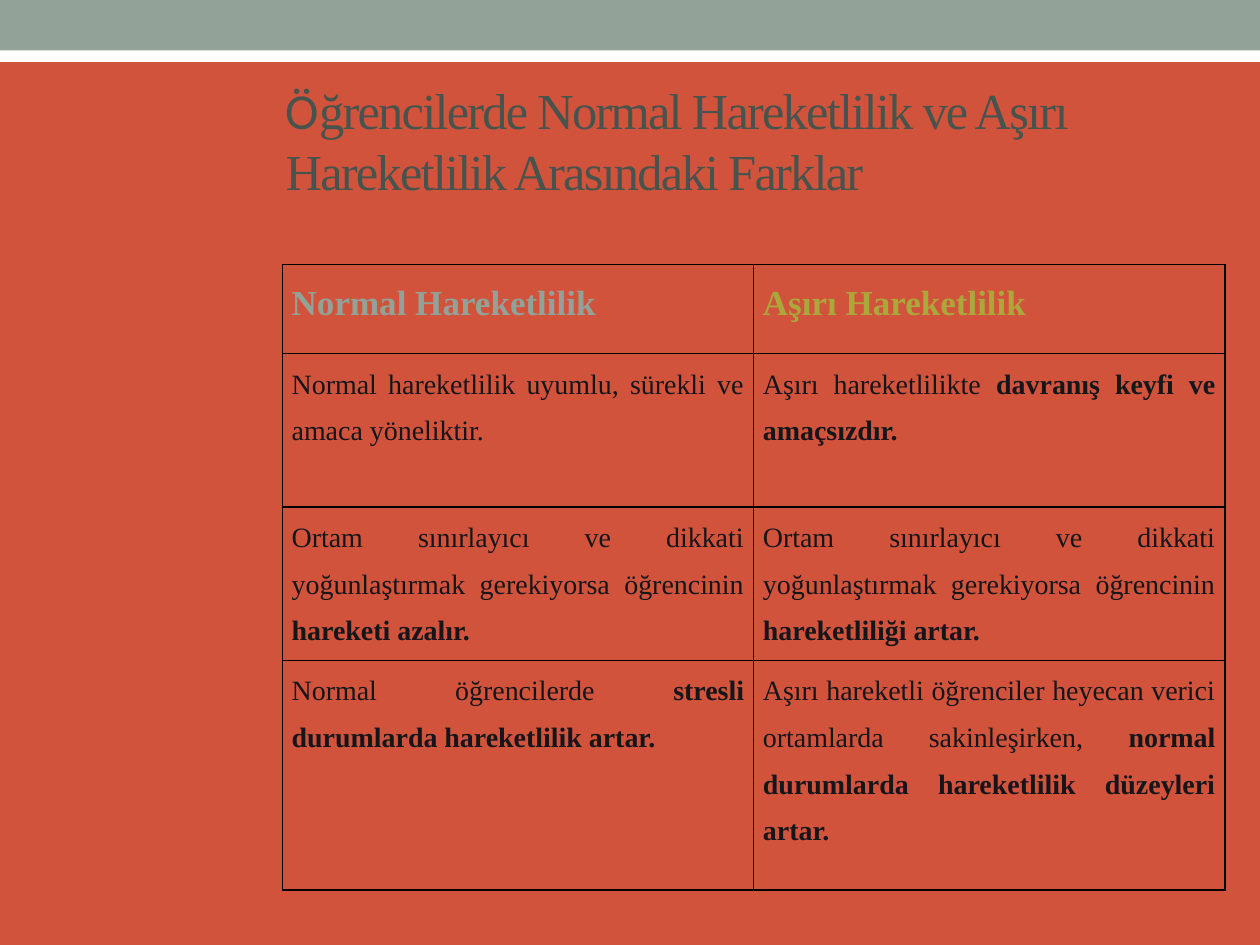
from lxml.etree import SubElement
from pptx import Presentation
from pptx.dml.color import RGBColor
from pptx.enum.shapes import MSO_SHAPE as Shape
from pptx.enum.text import MSO_ANCHOR as Anchor, PP_ALIGN as Align
from pptx.oxml.ns import qn
from pptx.util import Cm, Pt

COLORS = {
    "background": "D2533C", "white": "FFFFFF", "sage": "93A299",
    "title": "47534C", "olive": "ACA73B", "body": "15151A", "border": "000000",
}
SERIF = "Times New Roman"

# Content: each body cell is (plain text, bold text)
TITLE = [
    ("Ö", "Calibri"),
    ("ğrencilerde Normal Hareketlilik ve Aşırı Hareketlilik Arasındaki Farklar", SERIF),
]
HEADINGS = [("Normal Hareketlilik", "sage"), ("Aşırı Hareketlilik", "olive")]
LIMITS = "Ortam sınırlayıcı ve dikkati yoğunlaştırmak gerekiyorsa öğrencinin "
ROWS = [
    [("Normal hareketlilik uyumlu, sürekli ve amaca yöneliktir.", ""),
     ("Aşırı hareketlilikte ", "davranış keyfi ve amaçsızdır.")],
    [(LIMITS, "hareketi azalır."), (LIMITS, "hareketliliği artar.")],
    [("Normal öğrencilerde ", "stresli durumlarda hareketlilik artar."),
     ("Aşırı hareketli öğrenciler heyecan verici ortamlarda sakinleşirken, ",
      "normal durumlarda hareketlilik düzeyleri artar.")],
]

# Layout in centimetres
SLIDE_WIDTH, SLIDE_HEIGHT = 25.4, 19.05
BANDS = [(0.61, 0.64, "white"), (0, 1.02, "sage")]
TITLE_BOX = (5.51, 1.83, 19.25, 1.98)
TABLE_LEFT, TABLE_TOP, COLUMN_WIDTH = 5.69, 5.33, 9.5
ROW_HEIGHTS = [1.8, 3.09, 3.09, 4.63]


def rgb(name):
    return RGBColor.from_string(COLORS[name])


def add_text(para, text, size=16, font=SERIF, color="body", bold=False, spacing=0):
    span = para.add_run()
    span.text = text
    span.font.size = Pt(size)
    span.font.name = font
    span.font.bold = bold
    span.font.color.rgb = rgb(color)
    if spacing:
        span._r.get_or_add_rPr().set("spc", str(spacing * 100))


def add_borders(cell):
    properties = cell._tc.get_or_add_tcPr()
    for side in ("lnL", "lnR", "lnT", "lnB"):
        line = SubElement(properties, qn(f"a:{side}"), w=str(Pt(1)))
        fill = SubElement(line, qn("a:solidFill"))
        SubElement(fill, qn("a:srgbClr"), val=COLORS["border"])


def format_cell(cell):
    add_borders(cell)
    cell.fill.background()
    cell.margin_left = cell.margin_right = Cm(0.19)
    cell.margin_top = cell.margin_bottom = 0
    para = cell.text_frame.paragraphs[0]
    para.alignment = Align.JUSTIFY
    para.line_spacing = 1.5
    para.space_after = Pt(10)
    return para


deck = Presentation()
deck.slide_width, deck.slide_height = Cm(SLIDE_WIDTH), Cm(SLIDE_HEIGHT)
page = deck.slides.add_slide(deck.slide_layouts[6])
page.background.fill.solid()
page.background.fill.fore_color.rgb = rgb("background")

# Bands along the top
for top, height, color in BANDS:
    band = page.shapes.add_shape(Shape.RECTANGLE, 0, Cm(top), Cm(SLIDE_WIDTH), Cm(height))
    band.shadow.inherit = False
    band.fill.solid()
    band.fill.fore_color.rgb = rgb(color)
    band.line.fill.background()

# Title
box = page.shapes.add_textbox(*map(Cm, TITLE_BOX))
box.text_frame.word_wrap = True
box.text_frame.vertical_anchor = Anchor.MIDDLE
for text, font in TITLE:
    add_text(box.text_frame.paragraphs[0], text, size=28.8, font=font,
             color="title", spacing=-1)

# Comparison table
columns = len(HEADINGS)
table = page.shapes.add_table(
    len(ROW_HEIGHTS), columns, Cm(TABLE_LEFT), Cm(TABLE_TOP),
    Cm(columns * COLUMN_WIDTH), Cm(sum(ROW_HEIGHTS))).table
table.first_row = table.horz_banding = False
for column in table.columns:
    column.width = Cm(COLUMN_WIDTH)
for row, height in zip(table.rows, ROW_HEIGHTS):
    row.height = Cm(height)

for column, (heading, color) in enumerate(HEADINGS):
    add_text(format_cell(table.cell(0, column)), heading, size=20, color=color, bold=True)
for row, entries in enumerate(ROWS, start=1):
    for column, (plain, strong) in enumerate(entries):
        para = format_cell(table.cell(row, column))
        add_text(para, plain)
        if strong:
            add_text(para, strong, bold=True)

deck.save("out.pptx")
